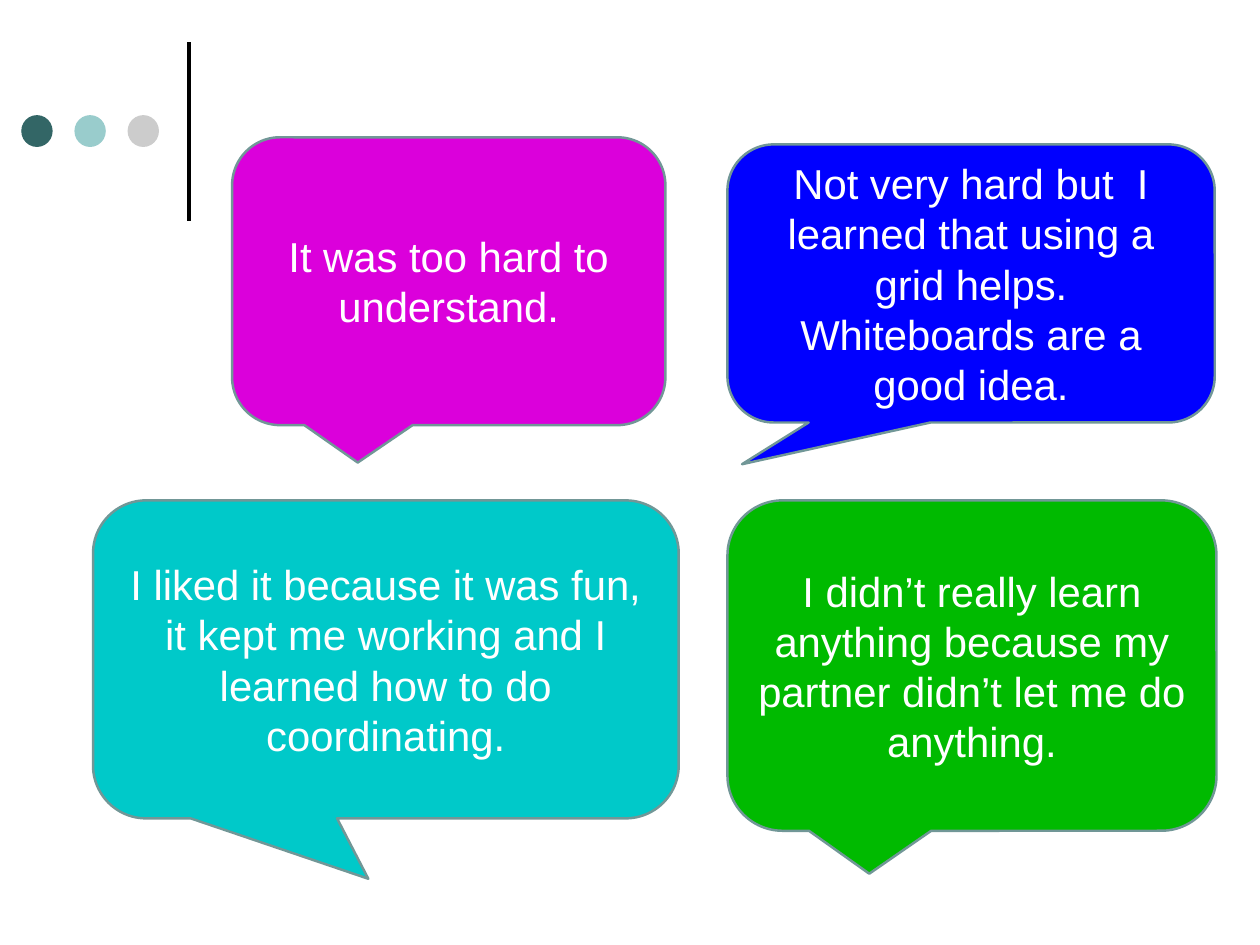
from dataclasses import dataclass

from lxml.etree import SubElement
from pptx import Presentation
from pptx.dml.color import RGBColor
from pptx.enum.shapes import MSO_CONNECTOR, MSO_SHAPE
from pptx.enum.text import MSO_ANCHOR, PP_ALIGN
from pptx.oxml.ns import qn
from pptx.util import Pt


@dataclass(frozen=True)
class Theme:
    font: str = "Arial"
    size: int = 34
    text: str = "FFFFFF"
    rule: str = "000000"
    outline: str = "719797"
    dots: tuple = ("336666", "99CCCC", "CCCCCC")
    magenta: str = "DB00DB"
    green: str = "00BA00"
    blue: str = "0000FF"
    teal: str = "00C9C9"


theme = Theme()


def write(tf, text, *, size, color, font, align):
    p = tf.paragraphs[0]
    p.alignment = align
    r = p.add_run()
    r.text = text
    r.font.name = font
    r.font.size = Pt(size)
    r.font.color.rgb = RGBColor.from_string(color)


prs = Presentation()
prs.slide_width = Pt(1023.84)
prs.slide_height = Pt(768.24)
s = prs.slides.add_slide(prs.slide_layouts[6])

rule = s.shapes.add_connector(MSO_CONNECTOR.STRAIGHT, Pt(153.4), Pt(179.3), Pt(153.4), Pt(33.8))
rule.line.color.rgb = RGBColor.from_string(theme.rule)
rule.line.width = Pt(3)
SubElement(rule._element.spPr, qn("a:effectLst"))

for i, color in enumerate(theme.dots):
    sp = s.shapes.add_shape(MSO_SHAPE.OVAL, Pt(17.3 + 43.2 * i), Pt(93.6), Pt(25.5), Pt(25.9))
    sp.shadow.inherit = False
    sp.fill.solid()
    sp.fill.fore_color.rgb = RGBColor.from_string(color)
    sp.line.fill.background()

centre_tail = (-0.21, 0.63)
callouts = [
    ("It was too hard to understand.",
     theme.magenta, (188.6, 111.6, 352.1, 234), centre_tail),
    ("I didn’t really learn anything because my partner didn’t let me do anything.",
     theme.green, (591.1, 406.8, 397.4, 268.6), centre_tail),
    ("Not very hard but  I learned that using a grid helps. Whiteboards are a good idea.",
     theme.blue, (591.1, 117.4, 396, 226.1), (-0.47, 0.65)),
    ("I liked it because it was fun, it kept me working and I learned how to do coordinating.",
     theme.teal, (75.6, 406.8, 475.9, 258.5), (-0.03, 0.69)),
]

for text, color, box, tail in callouts:
    sp = s.shapes.add_shape(MSO_SHAPE.ROUNDED_RECTANGULAR_CALLOUT, *map(Pt, box))
    sp.adjustments[0], sp.adjustments[1] = tail
    sp.shadow.inherit = False
    sp.fill.solid()
    sp.fill.fore_color.rgb = RGBColor.from_string(color)
    sp.line.color.rgb = RGBColor.from_string(theme.outline)
    sp.line.width = Pt(2)
    tf = sp.text_frame
    tf.word_wrap = True
    tf.vertical_anchor = MSO_ANCHOR.MIDDLE
    tf.margin_left = tf.margin_right = Pt(10)
    tf.margin_top = tf.margin_bottom = Pt(5)
    write(tf, text, size=theme.size, color=theme.text, font=theme.font, align=PP_ALIGN.CENTER)

prs.save("out.pptx")
